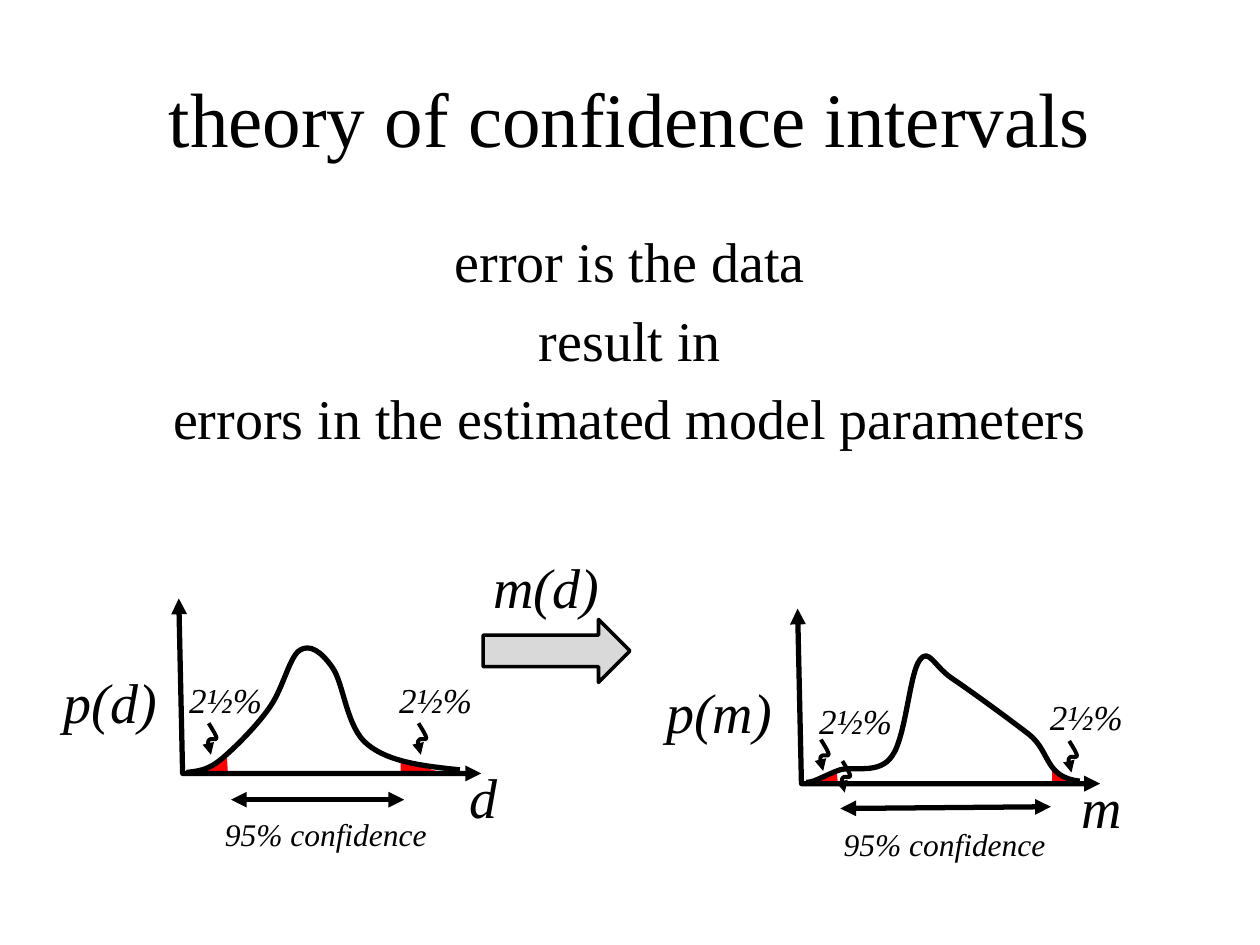
from lxml.etree import SubElement
from pptx import Presentation
from pptx.dml.color import RGBColor
from pptx.enum.shapes import MSO_CONNECTOR, MSO_SHAPE
from pptx.enum.text import MSO_ANCHOR, PP_ALIGN
from pptx.oxml.ns import qn
from pptx.util import Pt

BLACK = RGBColor(0x00, 0x00, 0x00)
RED = RGBColor(0xFF, 0x00, 0x00)
GREY = RGBColor(0xD9, 0xD9, 0xD9)

# Wavy pointer, relative to its start: first point, then Bezier triples
SQUIGGLE = [(0, 0), (2.2, 3.6), (4.5, 7.2), (4.5, 8.6), (4.5, 10), (0.2, 7.9),
            (-0.2, 10.1), (-0.6, 11.5), (0.5, 14.4), (1.3, 18)]

DATA_CURVE = [
    (106.6, 441.4), (112.3, 440.6), (118.1, 440.6), (126, 434.2),
    (133.9, 427.7), (147.6, 414), (154.8, 403.2),
    (162, 392.4), (165.6, 375.1), (171.4, 371.5),
    (177.1, 367.9), (183.6, 372.2), (190.1, 381.6),
    (196.6, 391), (198, 416.2), (210.2, 425.5),
    (222.5, 435.6), (242.6, 437.8), (262.8, 439.9)]
MODEL_CURVE = [
    (460.8, 447.1), (465.8, 447.1), (471.6, 442.8), (480.2, 439.9),
    (488.2, 437.8), (502.6, 442.8), (509.8, 432),
    (517.7, 421.2), (519.8, 384.5), (525.6, 377.3),
    (530.6, 370.1), (533.5, 380.2), (543.6, 387.4),
    (554.4, 394.6), (576, 410.4), (588.2, 419.8),
    (600.5, 429.8), (596.9, 444.2), (617, 446.4)]
DATA_TAILS = [[(113, 442.8), (130.3, 442.1), (129.6, 430.6), (116.6, 440.6)],
              [(254.9, 442.1), (229, 442.1), (229, 434.9)]]
MODEL_TAILS = [[(464.4, 448.6), (478.8, 447.1), (478.1, 440.6)],
               [(601.2, 439.9), (601.2, 447.8), (615.6, 447.1)]]


class SlideWriter:
    """Holds the style and the current slide."""

    font = "Times New Roman"
    ink = BLACK

    def __init__(self, page):
        self.page = page

    def text(self, lines, left, top, width, height, size=32, italic=True,
             anchor=MSO_ANCHOR.TOP, space_percent=20):
        box = self.page.shapes.add_textbox(Pt(left), Pt(top), Pt(width), Pt(height))
        frame = box.text_frame
        frame.word_wrap = True
        frame.vertical_anchor = anchor
        for index, line in enumerate(lines.split("\n")):
            para = frame.paragraphs[0] if index == 0 else frame.add_paragraph()
            para.alignment = PP_ALIGN.CENTER
            # Spacing relative to the line height
            spacing = SubElement(para._p.get_or_add_pPr(), qn("a:spcBef"))
            SubElement(spacing, qn("a:spcPct"), val=str(space_percent * 1000))
            span = para.add_run()
            span.text = line
            span.font.name = self.font
            span.font.size = Pt(size)
            span.font.italic = italic
            span.font.color.rgb = self.ink

    def stroke(self, shape, width, ends=()):
        shape.line.color.rgb = self.ink
        shape.line.width = Pt(width)
        outline = shape._element.spPr.find(qn("a:ln"))
        for end in ends:
            SubElement(outline, qn(f"a:{end}"), type="triangle")

    def outline(self, points, close=False):
        scaled = [(Pt(x), Pt(y)) for x, y in points]
        builder = self.page.shapes.build_freeform(*scaled[0], scale=1.0)
        builder.add_line_segments(scaled[1:], close=close)
        shape = builder.convert_to_shape()
        shape.shadow.inherit = False
        shape.fill.background()
        return shape

    def area(self, points, color):
        shape = self.outline(points, close=True)
        shape.fill.solid()
        shape.fill.fore_color.rgb = color
        shape.line.fill.background()

    def polyline(self, points, width, ends=()):
        self.stroke(self.outline(points), width, ends)

    def curve(self, points, width, ends=()):
        shape = self.outline(points)
        segments = list(shape._element.iter(qn("a:lnTo")))
        # Merge each three straight segments into one Bezier segment
        for start in range(0, len(segments), 3):
            bezier = SubElement(segments[0].getparent(), qn("a:cubicBezTo"))
            for segment in segments[start:start + 3]:
                bezier.append(segment[0])
        for segment in segments:
            segment.getparent().remove(segment)
        self.stroke(shape, width, ends)

    def squiggle(self, left, top):
        self.curve([(left + x, top + y) for x, y in SQUIGGLE], 2.25, ["tailEnd"])

    def double_arrow(self, start, end):
        line = self.page.shapes.add_connector(
            MSO_CONNECTOR.STRAIGHT, *(Pt(value) for value in (*start, *end)))
        SubElement(line._element.spPr, qn("a:effectLst"))
        self.stroke(line, 3, ["headEnd", "tailEnd"])

    def block_arrow(self, left, top, width, height):
        arrow = self.page.shapes.add_shape(
            MSO_SHAPE.RIGHT_ARROW, Pt(left), Pt(top), Pt(width), Pt(height))
        arrow.shadow.inherit = False
        arrow.fill.solid()
        arrow.fill.fore_color.rgb = GREY
        self.stroke(arrow, 2)

    def density(self, left, top, variable, label_center, tails, curve, marks, interval):
        for tail in tails:
            self.area(tail, RED)
        axes = [(left, top), (left + 2.2, top + 100), (left + 172.8, top + 100)]
        self.polyline(axes, 3, ["headEnd", "tailEnd"])
        self.curve(curve, 3)
        self.text(f"p({variable})", label_center - 57, top + 36, 114, 54)
        self.text(variable, left + 138, top + 90, 72, 54)
        self.text("95% confidence", left - 6, top + 120, 180, 54, size=18)
        self.double_arrow(*interval)
        for label, pointer in marks:
            self.text("2½%", *label, 114, 54, size=20)
            self.squiggle(*pointer)


def main():
    deck = Presentation()
    deck.slide_width, deck.slide_height = Pt(720), Pt(540)
    writer = SlideWriter(deck.slides.add_slide(deck.slide_layouts[6]))

    # Title and statement
    writer.text("theory of confidence intervals", 36, 21.6, 648, 90, size=44,
                italic=False, anchor=MSO_ANCHOR.MIDDLE, space_percent=0)
    writer.text("error is the data\nresult in\nerrors in the estimated model parameters",
                36, 126, 648, 144, italic=False)

    # Distribution of the data
    writer.density(102.2, 342, "d", 63, DATA_TAILS, DATA_CURVE,
                   marks=[((72, 384), (119.3, 413.3)), ((192, 384), (239.2, 413.3))],
                   interval=((132, 457), (231, 457)))

    # Mapping from data to model
    writer.block_arrow(276, 354, 84, 36)
    writer.text("m(d)", 246, 312, 132, 30)

    # Distribution of the model parameters
    writer.density(455.8, 347.8, "m", 411, MODEL_TAILS, MODEL_CURVE,
                   marks=[((432, 396), (469.1, 422.6)), ((563.8, 393.8), (611, 423.4))],
                   interval=((480.2, 462), (600.5, 461)))
    writer.squiggle(481.4, 434.9)

    deck.save("out.pptx")


if __name__ == "__main__":
    main()
